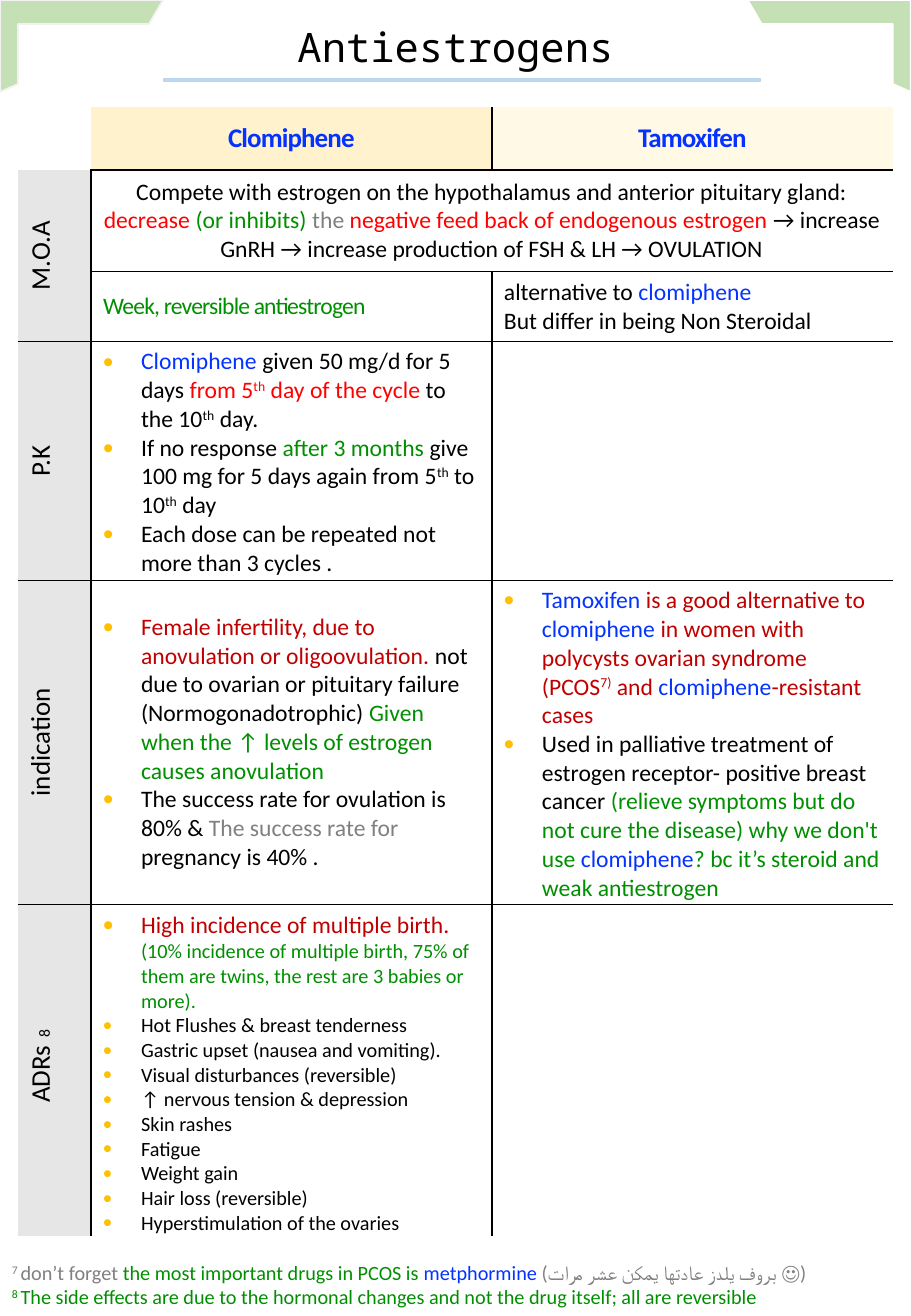
from lxml import etree
from pptx import Presentation
from pptx import util as u
from pptx.dml.color import RGBColor
from pptx.enum import shapes, text
from pptx.oxml.ns import qn

SCALE = 914400 / 121.5
INK, BLUE, GREEN = "000000", "0432FF", "008F00"
RED, WINE, GRAY = "FF0000", "C00000", "808080"
GOLD, LEAF, SIDE = "FFC000", "C5E0B4", "E7E6E6"
MID = text.PP_ALIGN.CENTER

COLS = [73, 401, 401]
ROWS = [63, 102, 69, 239, 324, 332]
MERGES = [(1, 0, 2, 0), (1, 1, 1, 2)]
TIGHT = {(3, 1): 3, (4, 2): 2, (5, 1): 0}
HEADS = [("Clomiphene", "FFF2CC"), ("Tamoxifen", "FFF9E6")]
LABELS = {1: "M.O.A", 3: "P.K", 4: "indication", 5: "ADRs^8^"}

ACTION = [
    ("Compete with estrogen on the hypothalamus and anterior pituitary gland: ", INK),
    ("decrease ", RED), ("(or inhibits) ", GREEN), ("the ", GRAY),
    ("negative feed back of endogenous estrogen ", RED),
    ("→ increase GnRH → increase production of FSH & LH → OVULATION", INK)]
WEAK = [("Week, reversible antiestrogen", GREEN)]
OTHER = [
    [("alternative to ", INK), ("clomiphene", BLUE)],
    [("But differ in being Non Steroidal", INK)]]
EFFECTS = [
    "Hot Flushes & breast tenderness", "Gastric upset (nausea and vomiting).",
    "Visual disturbances (reversible)", "↑ nervous tension & depression",
    "Skin rashes", "Fatigue", "Weight gain", "Hair loss (reversible)",
    "Hyperstimulation of the ovaries"]
LISTS = {
    (3, 1): [
        [("Clomiphene ", BLUE), ("given 50 mg/d for 5 days", INK),
         (" from 5^th^ day of the cycle", RED), (" to the 10^th^ day.", INK)],
        [("If no response ", INK), ("after 3 months ", GREEN),
         ("give 100 mg for 5 days again from 5^th^ to 10^th^ day", INK)],
        [("Each dose can be repeated not more than 3 cycles .", INK)]],
    (4, 1): [
        [("Female infertility, due to anovulation or oligoovulation. ", WINE),
         ("not due to ovarian or pituitary failure (Normogonadotrophic) ", INK),
         ("Given when the ↑ levels of estrogen causes anovulation", GREEN)],
        [("The success rate for ovulation is 80% & ", INK),
         ("The success rate for ", GRAY), ("pregnancy is 40% .", INK)]],
    (4, 2): [
        [("Tamoxifen ", BLUE), ("is a good alternative to ", WINE),
         ("clomiphene ", BLUE),
         ("in women with polycysts ovarian syndrome (PCOS^7)^ and ", WINE),
         ("clomiphene", BLUE), ("-resistant cases", WINE)],
        [("Used in palliative treatment of estrogen receptor- positive breast cancer ", INK),
         ("(relieve symptoms but do not cure the disease) why we don't use ", GREEN),
         ("clomiphene", BLUE),
         ("? bc it’s steroid and weak antiestrogen", GREEN)]]}
BIRTH = [
    ("High incidence of multiple birth. ", WINE),
    ("(10% incidence of multiple birth, 75% of them are twins, "
     "the rest are 3 babies or more).", GREEN, 12)]
NOTES = [
    [("^7 ^don’t forget ", GRAY),
     ("the most important drugs in PCOS is ", GREEN), ("metphormine ", BLUE),
     ("(بروف يلدز عادتها يمكن عشر مرات ☺)", GRAY)],
    [("^8 ^The side effects are due to the hormonal changes and not "
      "the drug itself; all are reversible", GREEN)]]
CORNER = [(0, 0), (0, 92), (18, 84), (18, 24), (149, 24), (163, 0)]


def px(n):
    return u.Emu(round(n * SCALE))


def hue(code):
    return RGBColor.from_string(code)


def sub(top, tag, **keys):
    return etree.SubElement(top, qn(tag), {k: str(v) for k, v in keys.items()})


def ruled(row, col, top):
    if top:
        return 0 < row < len(ROWS) and (col > 0 or row > 2)
    return 0 < col < len(COLS) and (row, col) not in [(0, 1), (1, 2)]


class Sheet:
    def __init__(self, deck, font):
        self.slide = deck.slides.add_slide(deck.slide_layouts[5])
        self.shapes = self.slide.shapes
        self.font = font

    def para(self, frame, runs, size, align=None, dot=False, bold=None, spc=0):
        p = frame.paragraphs[-1]
        if p.runs:
            p = frame.add_paragraph()
        if align is not None:
            p.alignment = align
        props = p._p.get_or_add_pPr()
        if dot:
            props.set("marL", str(px(38)))
            props.set("indent", str(-px(38)))
            sub(sub(props, "a:buClr"), "a:srgbClr", val=GOLD)
            sub(props, "a:buSzPct", val=125000)
            sub(props, "a:buFont", typeface="Arial")
            sub(props, "a:buChar", char="•")
        base = runs[0][1]
        p.font.name, p.font.size, p.font.bold = self.font, u.Pt(size), bold
        p.font.color.rgb = hue(base)
        sub(props.find(qn("a:defRPr")), "a:cs", typeface=self.font)
        for words, tint, *small in runs:
            for i, part in enumerate(words.split("^")):
                if not part:
                    continue
                run = p.add_run()
                run.text = part
                if tint != base:
                    run.font.color.rgb = hue(tint)
                if small:
                    run.font.size = u.Pt(small[0])
                if i % 2:
                    run._r.get_or_add_rPr().set("baseline", "30000")
                if spc:
                    run._r.get_or_add_rPr().set("spc", str(spc))

    def title(self, words, x, y, w, h):
        box = self.shapes.title
        box.left, box.top, box.width, box.height = map(px, (x, y, w, h))
        frame = box.text_frame
        frame.text = words
        frame.auto_size = text.MSO_AUTO_SIZE.NONE
        p = frame.paragraphs[0]
        p.alignment = MID
        p.font.name, p.font.size = "Noto Sans Mono", u.Pt(24)
        p.font.color.rgb = hue(INK)

    def line(self, x, y, end, tint, width):
        rule = self.shapes.add_connector(
            shapes.MSO_CONNECTOR.STRAIGHT, px(x), px(y), px(end), px(y))
        rule.line.color.rgb, rule.line.width = hue(tint), u.Pt(width)
        sub(rule._element.spPr, "a:effectLst")

    def free(self, spots, fill, edge):
        spots = [(px(x), px(y)) for x, y in spots]
        pen = self.shapes.build_freeform(*spots[0])
        pen.add_line_segments(spots[1:], close=True)
        form = pen.convert_to_shape()
        form.shadow.inherit = False
        form.fill.solid()
        form.fill.fore_color.rgb = hue(fill)
        form.line.color.rgb, form.line.width = hue(edge), u.Pt(1)

    def note(self, x, y, w, h, lines, size):
        frame = self.shapes.add_textbox(*map(px, (x, y, w, h))).text_frame
        frame.word_wrap = True
        for runs in lines:
            self.para(frame, runs, size)

    def table(self, x, y):
        grid = self.shapes.add_table(
            len(ROWS), len(COLS), px(x), px(y), px(sum(COLS)), px(sum(ROWS))).table
        grid.first_row = grid.horz_banding = False
        for col, w in zip(grid.columns, COLS):
            col.width = px(w)
        for row, h in zip(grid.rows, ROWS):
            row.height = px(h)
        for r, c, down, over in MERGES:
            grid.cell(r, c).merge(grid.cell(down, over))
        for r in range(len(ROWS)):
            for c in range(len(COLS)):
                self.trim(grid.cell(r, c), r, c)
        for spot, gap in TIGHT.items():
            grid.cell(*spot).margin_bottom = px(gap)
        return grid

    def trim(self, cell, r, c):
        cell.vertical_anchor = text.MSO_ANCHOR.MIDDLE
        cell.fill.solid()
        tint = SIDE if c == 0 else HEADS[c - 1][1]
        cell.fill.fore_color.rgb = hue(tint if (r == 0) != (c == 0) else "FFFFFF")
        props = cell._tc.get_or_add_tcPr()
        if c == 0 and r > 0:
            props.set("vert", "vert270")
        sides = {"a:lnL": ruled(r, c, False),
                 "a:lnR": ruled(r, c + cell.span_width, False),
                 "a:lnT": ruled(r, c, True),
                 "a:lnB": ruled(r + cell.span_height, c, True)}
        for i, (tag, on) in enumerate(sides.items()):
            edge = sub(props, tag, w=u.Pt(1))
            if on:
                sub(sub(edge, "a:solidFill"), "a:srgbClr", val=INK)
            else:
                sub(edge, "a:noFill")
            props.insert(i, edge)


def main():
    deck = Presentation()
    deck.slide_width, deck.slide_height = u.Inches(7.5), u.Inches(10.84)
    page = Sheet(deck, "Calibri")
    page.line(163, 80, 761, "BDD7EE", 2.25)
    page.title("Antiestrogens", 107, 16, 697, 61)

    grid = page.table(18, 107)
    for c, (name, _) in enumerate(HEADS, 1):
        page.para(grid.cell(0, c).text_frame, [(name, BLUE)], 16, MID, bold=True, spc=-50)
    for r, name in LABELS.items():
        page.para(grid.cell(r, 0).text_frame, [(name, INK)], 16, MID)
    page.para(grid.cell(1, 1).text_frame, ACTION, 14, MID)
    page.para(grid.cell(2, 1).text_frame, WEAK, 14, spc=-50)
    for runs in OTHER:
        page.para(grid.cell(2, 2).text_frame, runs, 14)
    for (r, c), items in LISTS.items():
        for runs in items:
            page.para(grid.cell(r, c).text_frame, runs, 14, dot=True)
    harms = grid.cell(5, 1).text_frame
    page.para(harms, BIRTH, 14, dot=True)
    for name in EFFECTS:
        page.para(harms, [(name, INK)], 12, dot=True)

    page.free([(911 - x, y) for x, y in CORNER], LEAF, "FFFFFF")
    page.free(CORNER, LEAF, "F2F2F2")
    page.note(0, 1255, 911, 61, NOTES, 12)
    deck.save("out.pptx")


if __name__ == "__main__":
    main()
